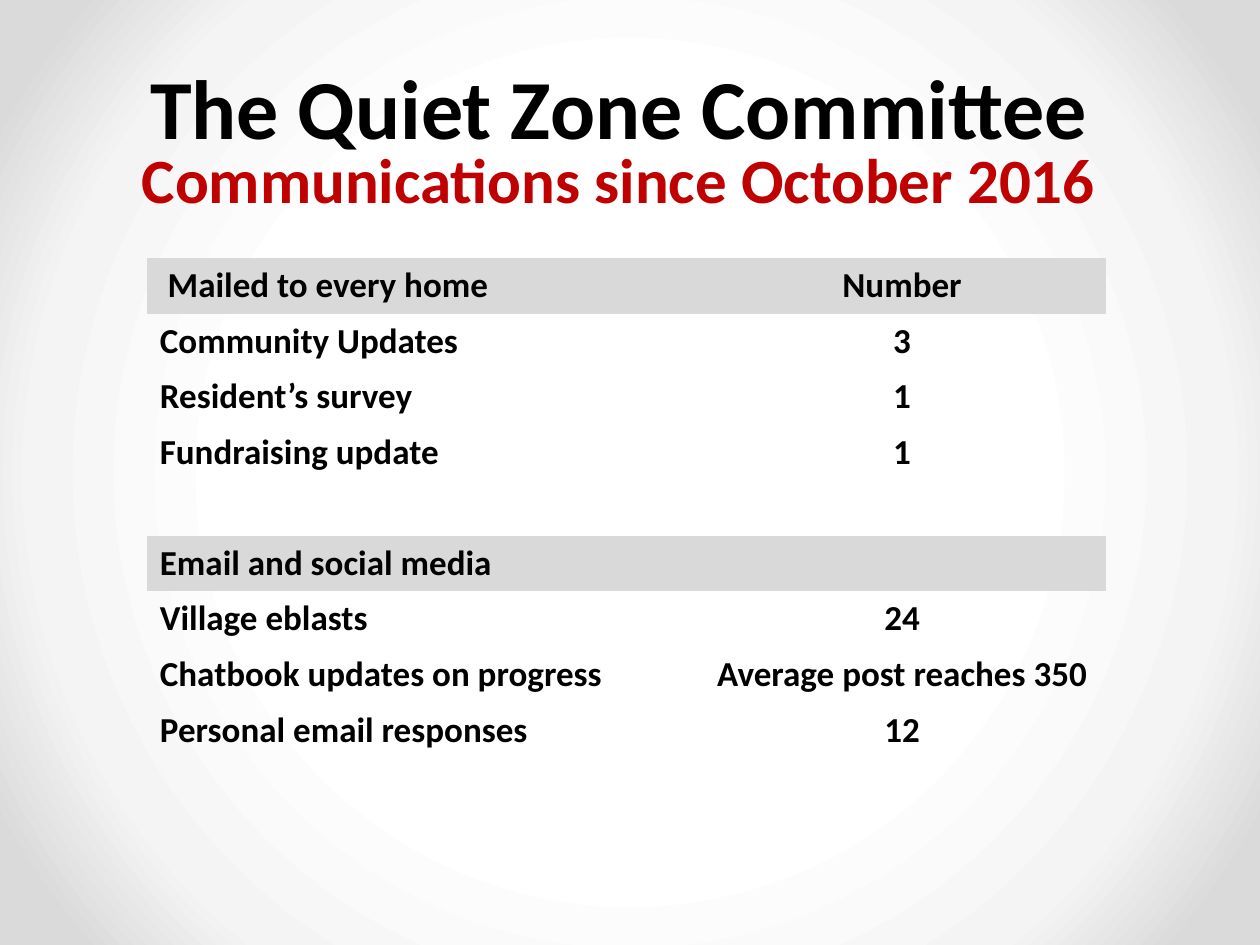
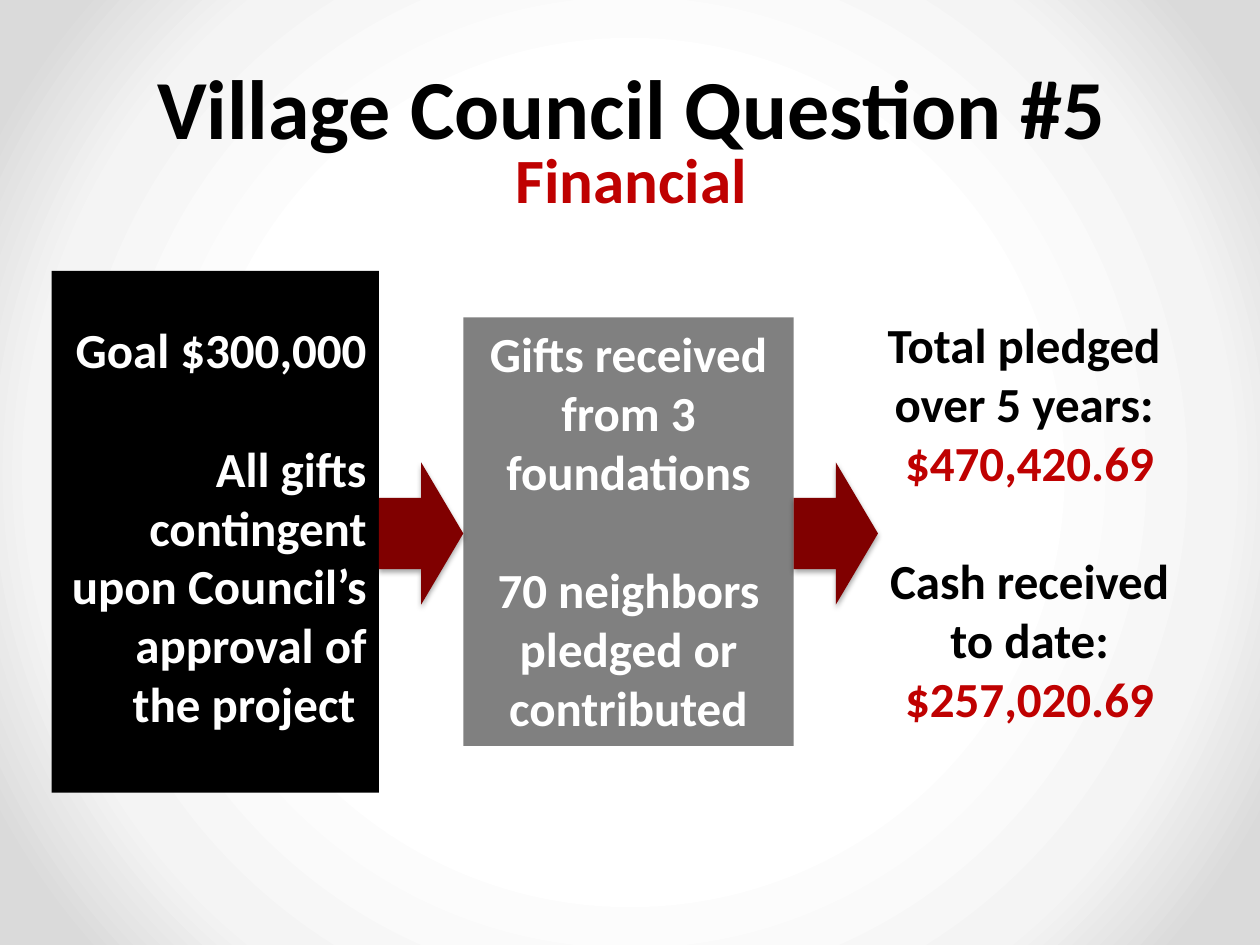
from lxml.etree import fromstring
from pptx import Presentation
from pptx.dml.color import RGBColor
from pptx.enum.shapes import MSO_SHAPE
from pptx.enum.text import MSO_ANCHOR, PP_ALIGN
from pptx.util import Cm, Pt

# Shared style
FONT = "Calibri"
COLORS = {"black": "000000", "white": "FFFFFF", "red": "BF0101", "maroon": "800000",
          "band": "D9D9D9", "gray": "808080"}
BACKGROUND = [(50, "FFFFFF"), (76, "F4F4F4"), (92, "DADADA")]
NS = 'xmlns:a="http://schemas.openxmlformats.org/drawingml/2006/main"'
NO_TABLE_STYLE = "{2D5ABB26-0587-4C30-8999-92F81FD0307C}"

# Slide 1 content: (heading, number, rows), one tuple per section
COMMITTEE = ("The Quiet Zone Committee", "Communications since October 2016")
SECTIONS = [
    ("Mailed to every home", "Number", [
        ("Community Updates", "3"),
        ("Resident’s survey", "1"),
        ("Fundraising update", "1")]),
    ("Email and social media", "", [
        ("Village eblasts", "24"),
        ("Chatbook updates on progress", "Average post reaches 350"),
        ("Personal email responses", "12")]),
]
TABLE_LEFT, TABLE_TOP, ROW_HEIGHT = 2.97, 5.2, 1.12
COLUMN_WIDTHS = (11.1, 8.23)

# Slide 2 content: groups of (text, color); a gap separates groups
FINANCIAL = ("Village Council Question #5", "Financial")
GOAL = [[("Goal $300,000", "white")],
        [("All gifts contingent upon Council’s approval of the project ", "white")]]
GIFTS = [[("Gifts received from 3 foundations", "white")],
         [("70 neighbors pledged or contributed", "white")]]
TOTALS = [[("Total pledged ", "black"), ("over 5 years: ", "black"), ("$470,420.69", "red")],
          [("Cash received to date:", "black"), ("$257,020.69", "red")]]
# (left, top, width, height, top margin, fill, alignment, groups)
PANELS = [
    (1.04, 5.46, 6.6, 10.52, 0.99, "black", PP_ALIGN.RIGHT, GOAL),
    (9.34, 6.4, 6.66, 8.64, 0.13, "gray", PP_ALIGN.CENTER, GIFTS),
    (17.35, 5.36, 6.81, 9.5, 0.99, None, PP_ALIGN.CENTER, TOTALS),
]
ARROW_TOP, ARROW_WIDTH, ARROW_HEIGHT = 9.32, 1.7, 2.87


def rgb(name):
    return RGBColor.from_string(COLORS[name])


def style(p, size, color):
    for r in p.runs:
        r.font.name, r.font.size, r.font.bold = FONT, Pt(size), True
        r.font.color.rgb = rgb(color)


def set_background(s):
    fill = s.background.fill
    fill.gradient()
    old = s.background._cSld.bg.bgPr[0]
    stops = "".join(f'<a:gs pos="{pos * 1000}"><a:srgbClr val="{c}"/></a:gs>'
                    for pos, c in BACKGROUND)
    new = fromstring(
        f'<a:gradFill {NS} rotWithShape="1"><a:gsLst>{stops}</a:gsLst><a:path path="circle">'
        '<a:fillToRect l="50000" t="50000" r="50000" b="50000"/></a:path></a:gradFill>')
    old.getparent().replace(old, new)


def new_slide(prs, title, title_width):
    s = prs.slides.add_slide(prs.slide_layouts[6])
    set_background(s)
    tf = s.shapes.add_textbox(Cm(0.41), Cm(0.03), Cm(title_width), Cm(4.45)).text_frame
    tf.word_wrap, tf.vertical_anchor = True, MSO_ANCHOR.BOTTOM
    p = tf.paragraphs[0]
    p.text = "\v".join(title)
    p.alignment, p.line_spacing = PP_ALIGN.CENTER, 0.8
    style(p, 48, "black")
    subtitle = p.runs[1].font
    subtitle.size, subtitle.color.rgb = Pt(36), rgb("red")
    return s


def add_communications(s):
    rows = []
    for heading, number, items in SECTIONS:
        if rows:
            rows.append(("", "", None))
        rows.append((heading, number, "band"))
        rows += [(label, value, None) for label, value in items]
    frame = s.shapes.add_table(len(rows), 2, Cm(TABLE_LEFT), Cm(TABLE_TOP),
                               Cm(sum(COLUMN_WIDTHS)), Cm(ROW_HEIGHT * len(rows)))
    table = frame.table
    table.first_row = table.horz_banding = False
    table._tbl.tblPr[0].text = NO_TABLE_STYLE
    for column, width in zip(table.columns, COLUMN_WIDTHS):
        column.width = Cm(width)
    for i, (*texts, band) in enumerate(rows):
        table.rows[i].height = Cm(ROW_HEIGHT)
        for j, text in enumerate(texts):
            cell = table.cell(i, j)
            if band:
                cell.fill.solid()
                cell.fill.fore_color.rgb = rgb(band)
            else:
                cell.fill.background()
            p = cell.text_frame.paragraphs[0]
            p.text = text
            p.alignment = PP_ALIGN.CENTER if j else PP_ALIGN.LEFT
            style(p, 20, "black")
    table.cell(0, 0).margin_left = Cm(0.41)


def add_panel(s, left, top, width, height, margin, fill, align, groups):
    box = Cm(left), Cm(top), Cm(width), Cm(height)
    if fill:
        sp = s.shapes.add_shape(MSO_SHAPE.RECTANGLE, *box)
        sp.shadow.inherit = False
        sp.fill.solid()
        sp.fill.fore_color.rgb = rgb(fill)
        sp.line.fill.background()
    else:
        sp = s.shapes.add_textbox(*box)
    tf = sp.text_frame
    tf.word_wrap, tf.vertical_anchor, tf.margin_top = True, MSO_ANCHOR.TOP, Cm(margin)
    p = None
    for group in groups:
        for i, (text, color) in enumerate(group):
            gap = p is not None and i == 0
            p = tf.paragraphs[0] if p is None else tf.add_paragraph()
            p.text, p.alignment = text, align
            if gap:
                p.space_before = Pt(34)
            style(p, 28, color)


def add_arrow(s, left):
    sp = s.shapes.add_shape(MSO_SHAPE.RIGHT_ARROW, Cm(left), Cm(ARROW_TOP),
                            Cm(ARROW_WIDTH), Cm(ARROW_HEIGHT))
    sp.fill.solid()
    sp.fill.fore_color.rgb = rgb("maroon")
    sp.line.fill.background()
    sp._element.spPr.append(fromstring(
        f'<a:effectLst {NS}><a:outerShdw blurRad="{Pt(3.1)}" dist="{Pt(1.8)}" dir="5400000" '
        'rotWithShape="0"><a:srgbClr val="000000"><a:alpha val="35000"/></a:srgbClr>'
        '</a:outerShdw></a:effectLst>'))


def main():
    prs = Presentation()
    prs.slide_width, prs.slide_height = Cm(25.4), Cm(19.05)

    # Communications table
    add_communications(new_slide(prs, COMMITTEE, 24.13))

    # Financial flow: an arrow leaves the right side of each filled panel
    s = new_slide(prs, FINANCIAL, 24.64)
    for panel in PANELS:
        add_panel(s, *panel)
    for left, _, width, *_ in PANELS[:-1]:
        add_arrow(s, left + width)

    prs.save("out.pptx")


if __name__ == "__main__":
    main()
